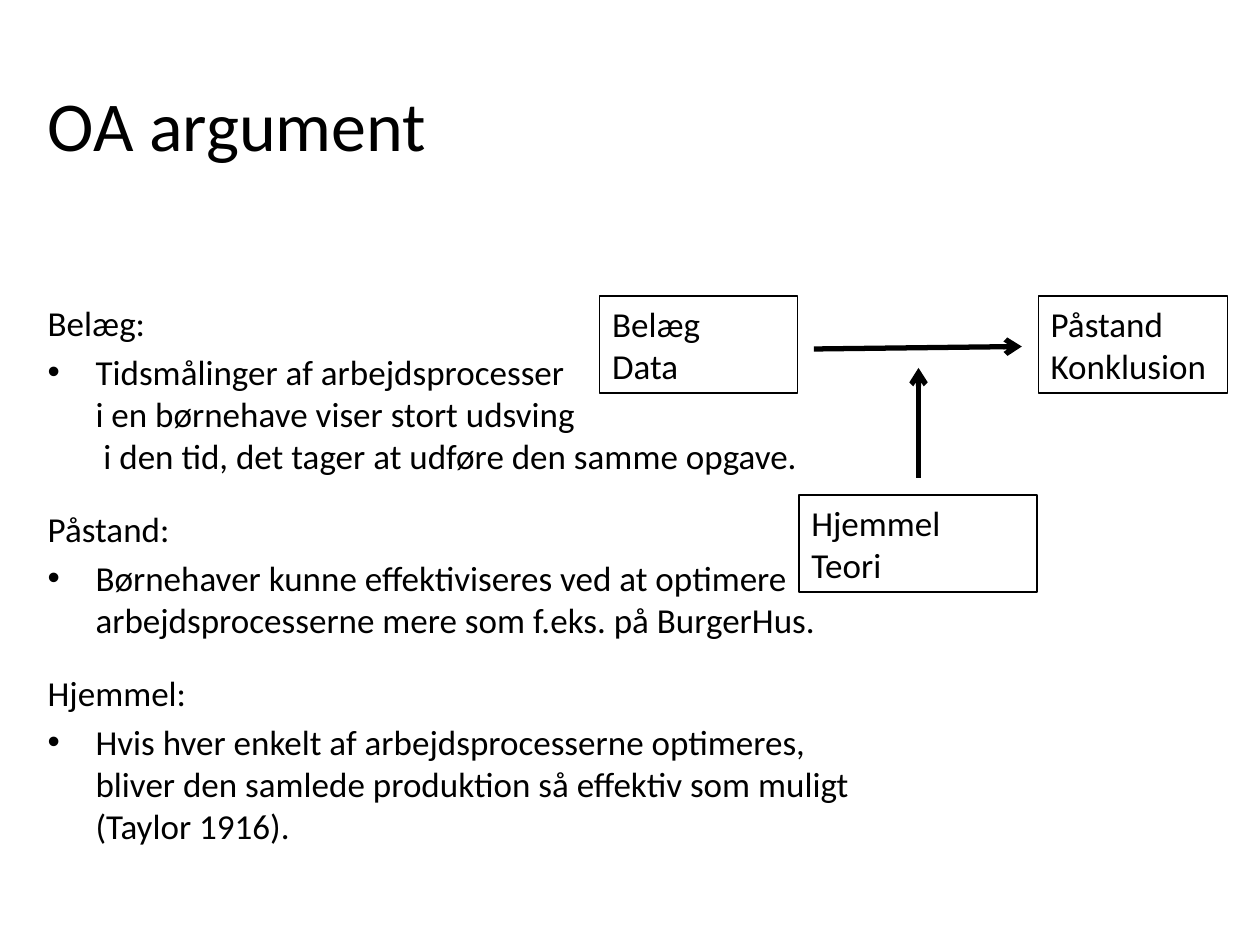
from lxml import etree
from pptx import Presentation
from pptx.dml.color import RGBColor
from pptx.enum.shapes import MSO_CONNECTOR, MSO_SHAPE
from pptx.enum.text import MSO_ANCHOR, PP_ALIGN
from pptx.oxml.ns import qn
from pptx.util import Inches, Pt

RECTANGLE = MSO_SHAPE.RECTANGLE
STRAIGHT = MSO_CONNECTOR.STRAIGHT
TOP = MSO_ANCHOR.TOP
LEFT = PP_ALIGN.LEFT

COLORS = {"ink": "000000", "paper": "FFFFFF"}
FONT = "Calibri"
COLUMNS, ROWS = 100, 75
HANGING_INDENT = Inches(0.38)

presentation = Presentation()
presentation.slide_width = Inches(10)
presentation.slide_height = Inches(7.5)
column = presentation.slide_width / COLUMNS
row = presentation.slide_height / ROWS
slide = presentation.slides.add_slide(presentation.slide_layouts[6])
slide.background.fill.solid()
slide.background.fill.fore_color.rgb = RGBColor.from_string(COLORS["paper"])


def grid(*cells):
    return [round(cell * (row if index % 2 else column)) for index, cell in enumerate(cells)]


def write_text(frame, text, size=20, first=False, before=0, spacing=1.0, bullet=False):
    frame.word_wrap = True
    frame.vertical_anchor = TOP
    paragraph = frame.paragraphs[0] if first else frame.add_paragraph()
    paragraph.text = text
    paragraph.alignment = LEFT
    paragraph.space_before = Pt(before)
    paragraph.line_spacing = spacing
    for run in paragraph.runs:
        run.font.name = FONT
        run.font.size = Pt(size)
        run.font.color.rgb = RGBColor.from_string(COLORS["ink"])
    if bullet:
        properties = paragraph._p.get_or_add_pPr()
        properties.set("marL", str(HANGING_INDENT))
        properties.set("indent", str(-HANGING_INDENT))
        etree.SubElement(properties, qn("a:buFont"), typeface="Arial")
        etree.SubElement(properties, qn("a:buChar"), char="•")


title = slide.shapes.add_textbox(*grid(2.8, 6, 94.6, 7.9))
write_text(title.text_frame, "OA argument", size=40, first=True)

sections = [
    ("Belæg:", "Tidsmålinger af arbejdsprocesser \v"
     "i en børnehave viser stort udsving\v"
     " i den tid, det tager at udføre den samme opgave."),
    ("Påstand:", "Børnehaver kunne effektiviseres ved at optimere "
     "arbejdsprocesserne mere som f.eks. på BurgerHus."),
    ("Hjemmel:", "Hvis hver enkelt af arbejdsprocesserne optimeres, "
     "bliver den samlede produktion så effektiv som muligt (Taylor 1916)."),
]
body = slide.shapes.add_textbox(*grid(2.8, 21.8, 66.9, 52.8))
for index, (heading, explanation) in enumerate(sections):
    first = index == 0
    write_text(body.text_frame, heading, first=first,
               before=0 if first else 17.5, spacing=1.5 if first else 1.0)
    write_text(body.text_frame, explanation, before=4, bullet=True)

boxes = [
    (("Belæg", "Data"), 47.6, 23.5, 15.7),
    (("Påstand", "Konklusion"), 82.4, 23.5, 15),
    (("Hjemmel", "Teori"), 63.4, 39.3, 18.9),
]
for lines, left, top, width in boxes:
    box = slide.shapes.add_shape(RECTANGLE, *grid(left, top, width, 7.7))
    box.shadow.inherit = False
    box.fill.background()
    box.line.color.rgb = RGBColor.from_string(COLORS["ink"])
    box.line.width = Pt(0.75)
    for index, line in enumerate(lines):
        write_text(box.text_frame, line, first=index == 0)

for ends in [(64.6, 27.7, 81.1, 27.5), (72.9, 37.9, 72.9, 29.2)]:
    arrow = slide.shapes.add_connector(STRAIGHT, *grid(*ends))
    arrow.line.color.rgb = RGBColor.from_string(COLORS["ink"])
    arrow.line.width = Pt(3)
    etree.SubElement(arrow.line._get_or_add_ln(), qn("a:tailEnd"), type="arrow")
    etree.SubElement(arrow._element.spPr, qn("a:effectLst"))

presentation.save("out.pptx")
